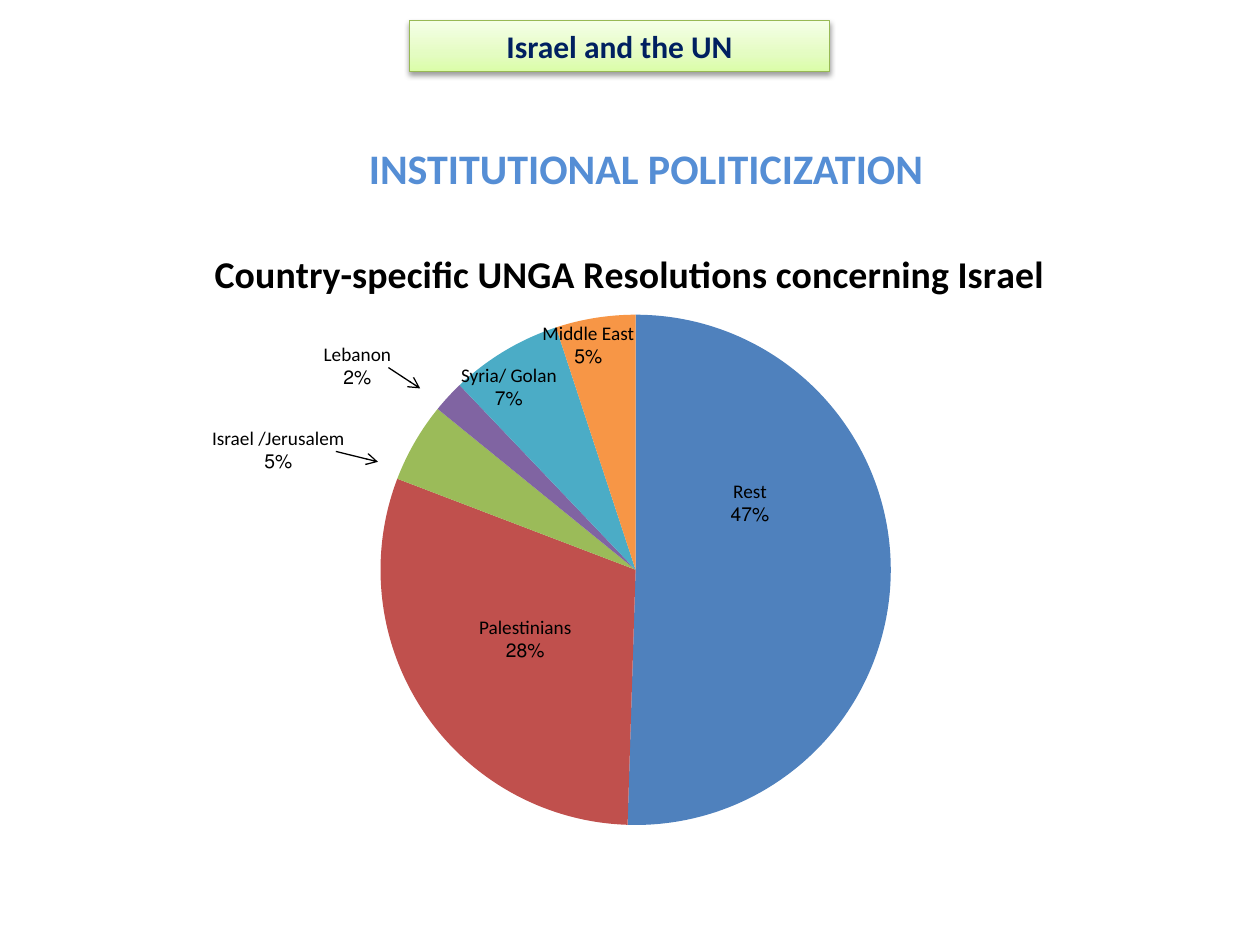
from lxml import etree
from pptx import Presentation
from pptx.chart.data import CategoryChartData
from pptx.dml.color import RGBColor
from pptx.enum.chart import XL_CHART_TYPE
from pptx.enum.shapes import MSO_CONNECTOR, MSO_SHAPE
from pptx.enum.text import MSO_ANCHOR, PP_ALIGN
from pptx.oxml import parse_xml
from pptx.oxml.ns import nsdecls, qn
from pptx.util import Cm, Pt

PIE = XL_CHART_TYPE.PIE
STRAIGHT = MSO_CONNECTOR.STRAIGHT
RECTANGLE = MSO_SHAPE.RECTANGLE
MIDDLE = MSO_ANCHOR.MIDDLE
CENTER = PP_ALIGN.CENTER

COLORS = {
    "black": "000000", "navy": "002060", "heading": "558ED5", "border": "98B955",
    "blue": "4F81BD", "red": "C0504D", "green": "9BBB59",
    "purple": "8064A2", "teal": "4BACC6", "orange": "F79646",
    "lime": "DAFDA7", "pale lime": "E4FCC2", "mist": "F5FFE7",
}
SLICES = [(50, "blue"), (30, "red"), (5, "green"),
          (2, "purple"), (7, "teal"), (5, "orange")]
# Name, share, and left, top, width, height in cm
LABELS = [
    ("Rest", "47%", (14.17, 9.53, 1.9, 2.41)),
    ("Palestinians", "28%", (9.32, 12.27, 2.54, 1.52)),
    ("Israel /Jerusalem", "5%", (3.81, 8.46, 3.6, 1.52)),
    ("Middle East", "5%", (10.59, 6.35, 2.54, 1.27)),
    ("Lebanon", "2%", (6.15, 6.78, 2.11, 1.32)),
    ("Syria/ Golan", "7%", (8.89, 7.19, 2.74, 1.32)),
]
# Start and end of each pointer in cm
POINTERS = [((7.83, 7.41), (8.47, 7.83)), ((6.77, 9.1), (7.62, 9.31))]


def rgb(name):
    return RGBColor.from_string(COLORS[name])


class SlideBuilder:
    def __init__(self, page, font="Calibri"):
        self.page = page
        self.font = font

    def style(self, font, size, color, bold=False):
        font.name = self.font
        font.size = Pt(size)
        font.bold = bold
        font.color.rgb = rgb(color)

    def fill_frame(self, frame, lines, size, color, bold=False):
        frame.word_wrap = True
        for index, line in enumerate(lines):
            para = frame.add_paragraph() if index else frame.paragraphs[0]
            para.alignment = CENTER
            para._p.get_or_add_pPr().set("rtl", "1")
            span = para.add_run()
            span.text = line
            self.style(span.font, size, color, bold)

    def text(self, place, lines, size, color="black", bold=False):
        box = self.page.shapes.add_textbox(*map(Cm, place))
        self.fill_frame(box.text_frame, lines, size, color, bold)

    def banner(self, place, title):
        box = self.page.shapes.add_shape(RECTANGLE, *map(Cm, place))
        box.line.color.rgb = rgb("border")
        box.line.width = Pt(0.75)
        stops = "".join(
            f'<a:gs pos="{pos * 1000}"><a:srgbClr val="{COLORS[name]}"/></a:gs>'
            for pos, name in ((0, "lime"), (35, "pale lime"), (100, "mist")))
        box.line._ln.addprevious(parse_xml(
            f'<a:gradFill {nsdecls("a")} rotWithShape="1"><a:gsLst>{stops}</a:gsLst>'
            '<a:lin ang="16200000" scaled="1"/></a:gradFill>'))
        box.line._ln.addnext(parse_xml(
            f'<a:effectLst {nsdecls("a")}><a:outerShdw blurRad="{Pt(3.1)}" '
            f'dist="{Pt(1.6)}" dir="5400000" rotWithShape="0">'
            f'<a:srgbClr val="{COLORS["black"]}"><a:alpha val="38000"/></a:srgbClr>'
            '</a:outerShdw></a:effectLst>'))
        box.text_frame.vertical_anchor = MIDDLE
        self.fill_frame(box.text_frame, [title], 18, "navy", True)

    def arrow(self, start, end):
        line = self.page.shapes.add_connector(STRAIGHT, *map(Cm, start + end))
        line.line.color.rgb = rgb("black")
        line.line.width = Pt(0.75)
        etree.SubElement(line.line._ln, qn("a:tailEnd"), type="arrow")
        etree.SubElement(line._element.spPr, qn("a:effectLst"))

    def pie(self, place, title, slices):
        data = CategoryChartData()
        data.categories = [str(number + 1) for number in range(len(slices))]
        data.add_series("Series 1", [value for value, _ in slices])
        chart = self.page.shapes.add_chart(PIE, *map(Cm, place), data).chart
        self.style(chart.font, 18, "black")
        chart.has_legend = False
        chart.has_title = True
        span = chart.chart_title.text_frame.paragraphs[0].add_run()
        span.text = title
        self.style(span.font, 21.6, "black", True)
        plot = chart.plots[0]
        plot.vary_by_categories = True
        for index, (_, color) in enumerate(slices):
            fill = plot.series[0].points[index].format.fill
            fill.solid()
            fill.fore_color.rgb = rgb(color)
        # Fixed place for the circle, as shares of the chart frame
        area = chart._chartSpace.chart.plotArea
        for old in area.findall(qn("c:layout")):
            area.remove(old)
        shares = "".join(f'<c:{key} val="{value}"/>' for key, value in (
            ("layoutTarget", "inner"), ("xMode", "edge"), ("yMode", "edge"),
            ("x", 0.28), ("y", 0.15), ("w", 0.45), ("h", 0.82)))
        area.insert(0, parse_xml(
            f'<c:layout {nsdecls("c")}><c:manualLayout>{shares}'
            '</c:manualLayout></c:layout>'))


def main():
    deck = Presentation()
    deck.slide_width, deck.slide_height = Cm(25.4), Cm(19.05)
    builder = SlideBuilder(deck.slides.add_slide(deck.slide_layouts[6]))

    # Pie chart with its labels and pointers
    builder.pie((1.27, 4.45, 22.86, 12.57),
                "Country-specific UNGA Resolutions concerning Israel", SLICES)
    for name, share, place in LABELS:
        builder.text(place, [name, share], 11)
    for start, end in POINTERS:
        builder.arrow(start, end)

    # Headings
    builder.banner((8.26, 0.42, 8.46, 1.03), "Israel and the UN")
    builder.text((3.6, 2.75, 18.85, 1.28), ["INSTITUTIONAL POLITICIZATION"],
                 24, "heading", True)

    deck.save("out.pptx")


if __name__ == "__main__":
    main()
